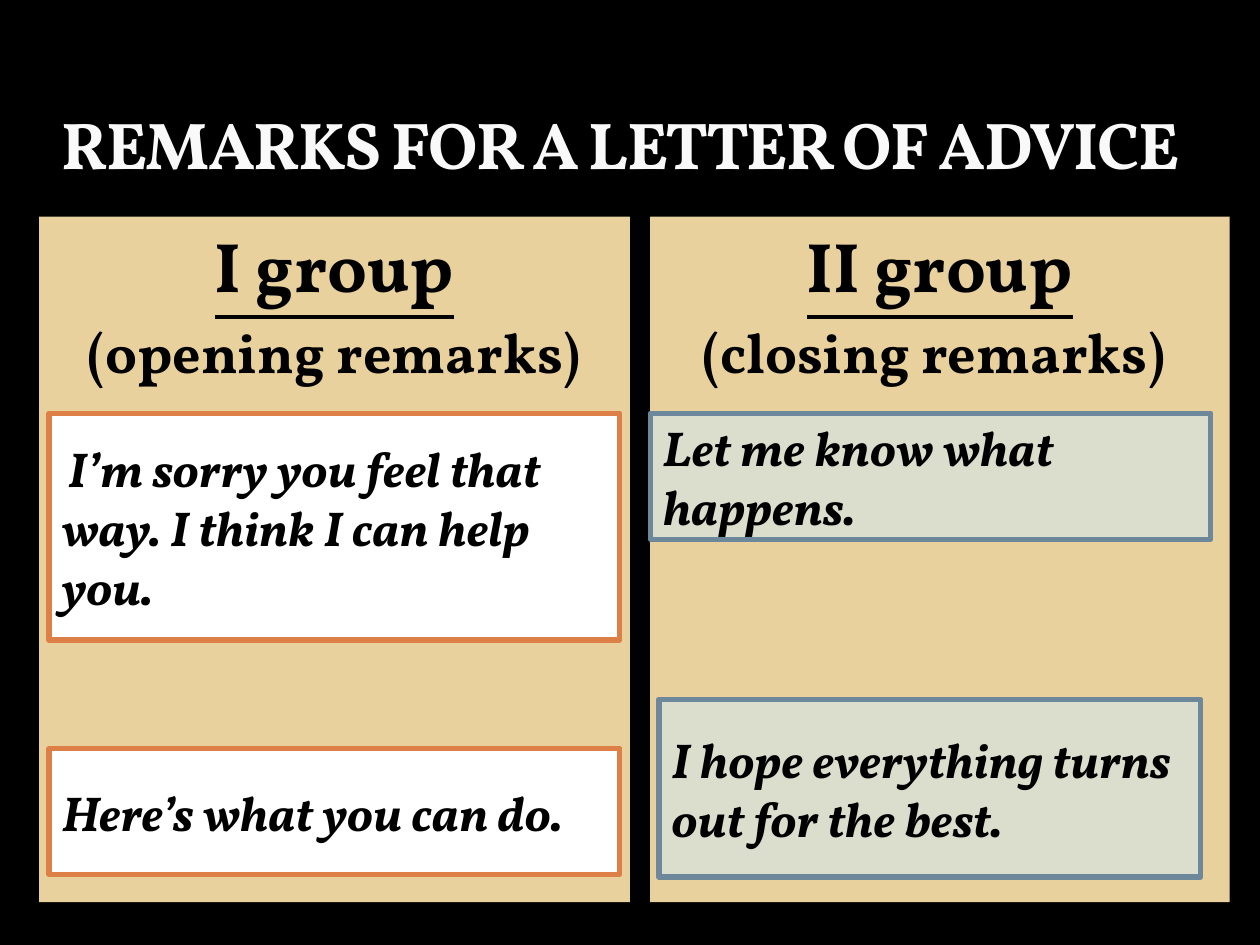
from dataclasses import dataclass

from pptx import Presentation
from pptx.dml.color import RGBColor
from pptx.enum import shapes, text
from pptx.util import Inches, Pt


@dataclass(frozen=True)
class Theme:
    font: str = "Vollkorn"
    background: str = "000000"
    title: str = "F9F9F9"
    ink: str = "000000"
    panel: str = "E8D19D"
    opening: tuple = ("FFFFFF", "DD8047")
    closing: tuple = ("DBDDCD", "6D879B")
    title_size: float = 37.8
    group_size: int = 40
    subtitle_size: int = 32
    remark_size: int = 28
    gap_size: int = 18


theme = Theme()


def add_span(para, words, size, color=theme.ink, **style):
    span = para.add_run()
    span.text = words
    format_values = {"name": theme.font, "size": Pt(size), **style}
    for name, value in format_values.items():
        setattr(span.font, name, value)
    span.font.color.rgb = RGBColor.from_string(color)
    return span


def add_box(place, fill, line=None, anchor=text.MSO_ANCHOR.MIDDLE):
    box = page.shapes.add_shape(shapes.MSO_SHAPE.RECTANGLE, *map(Inches, place))
    box.shadow.inherit = False
    box.fill.solid()
    box.fill.fore_color.rgb = RGBColor.from_string(fill)
    if line:
        box.line.color.rgb = RGBColor.from_string(line)
        box.line.width = Pt(3)
    else:
        box.line.fill.background()
    box.text_frame.word_wrap = True
    box.text_frame.vertical_anchor = anchor
    box.text_frame.paragraphs[0].alignment = text.PP_ALIGN.LEFT
    return box


deck = Presentation()
deck.slide_width, deck.slide_height = Inches(10), Inches(7.5)
page = deck.slides.add_slide(deck.slide_layouts[6])
page.background.fill.solid()
page.background.fill.fore_color.rgb = RGBColor.from_string(theme.background)

# Title
title = page.shapes.add_textbox(Inches(0.39), Inches(0.17), Inches(9.22), Inches(1.33))
title.text_frame.word_wrap = True
title.text_frame.vertical_anchor = text.MSO_ANCHOR.BOTTOM
heading = add_span(title.text_frame.paragraphs[0], "REMARKS FOR A LETTER OF ADVICE",
                   theme.title_size, theme.title, bold=True)
heading.font._element.set("spc", "-100")  # one point tighter

# Group panels
panels = [
    (0.31, 4.69, "I group", "(opening remarks)"),
    (5.16, 4.6, "II group", "(closing remarks) "),
]
for left, width, group, subtitle in panels:
    panel = add_box((left, 1.72, width, 5.44), theme.panel, anchor=text.MSO_ANCHOR.TOP)
    frame = panel.text_frame
    lines = [
        (frame.paragraphs[0], group, theme.group_size, True),
        (frame.add_paragraph(), subtitle, theme.subtitle_size, False),
    ]
    for para, words, size, underline in lines:
        para.alignment = text.PP_ALIGN.CENTER
        para.space_before = Pt(6)
        add_span(para, words, size, bold=True, underline=underline)

# Remark cards: place, colours, small lead-in gap, wording
remarks = [
    ((0.39, 3.28, 4.53, 1.8), theme.opening, " ",
     "I’m sorry you feel that way. I think I can help you."),
    ((0.39, 5.94, 4.53, 1), theme.opening, "", "Here’s what you can do."),
    ((5.16, 3.28, 4.45, 1), theme.closing, "", "Let me know what happens."),
    ((5.23, 5.55, 4.3, 1.41), theme.closing, "",
     "I hope everything turns out for the best."),
]
for place, (fill, line), gap, words in remarks:
    para = add_box(place, fill, line).text_frame.paragraphs[0]
    if gap:
        add_span(para, gap, theme.gap_size)
    add_span(para, words, theme.remark_size, bold=True, italic=True)

deck.save("out.pptx")
